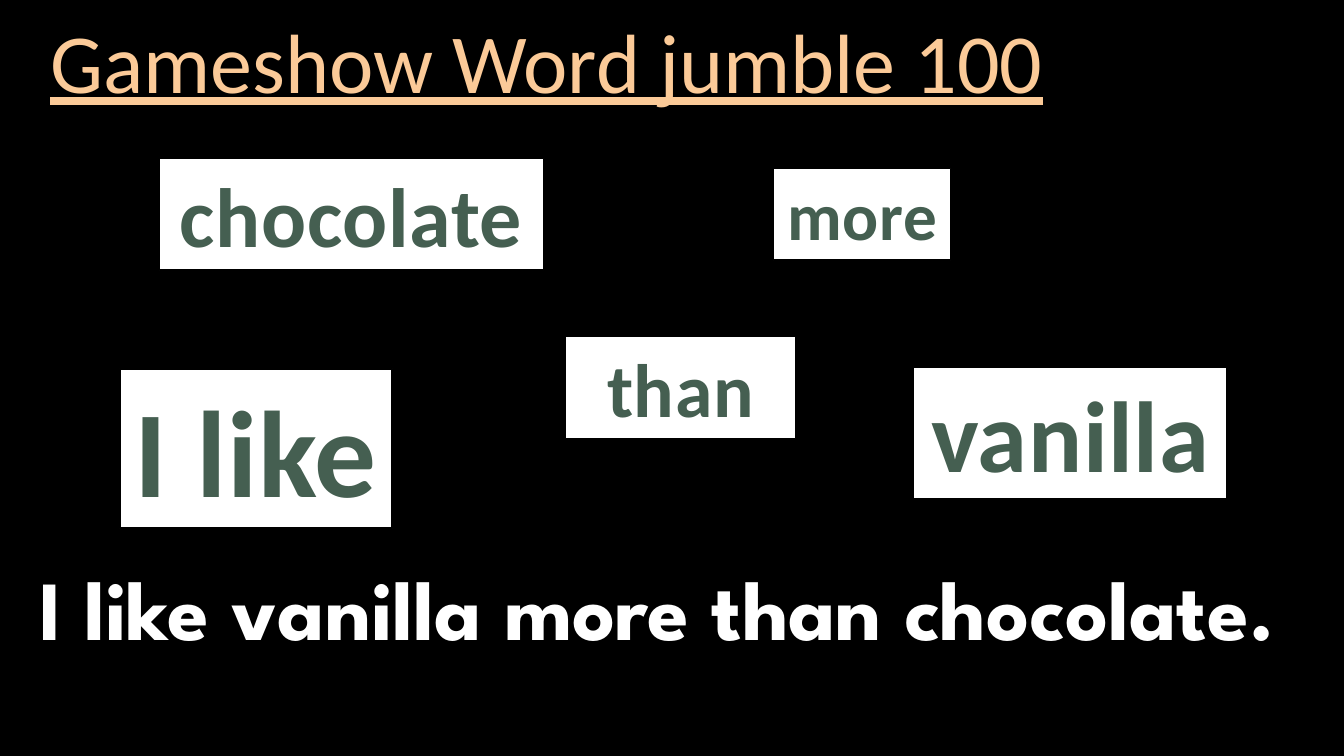
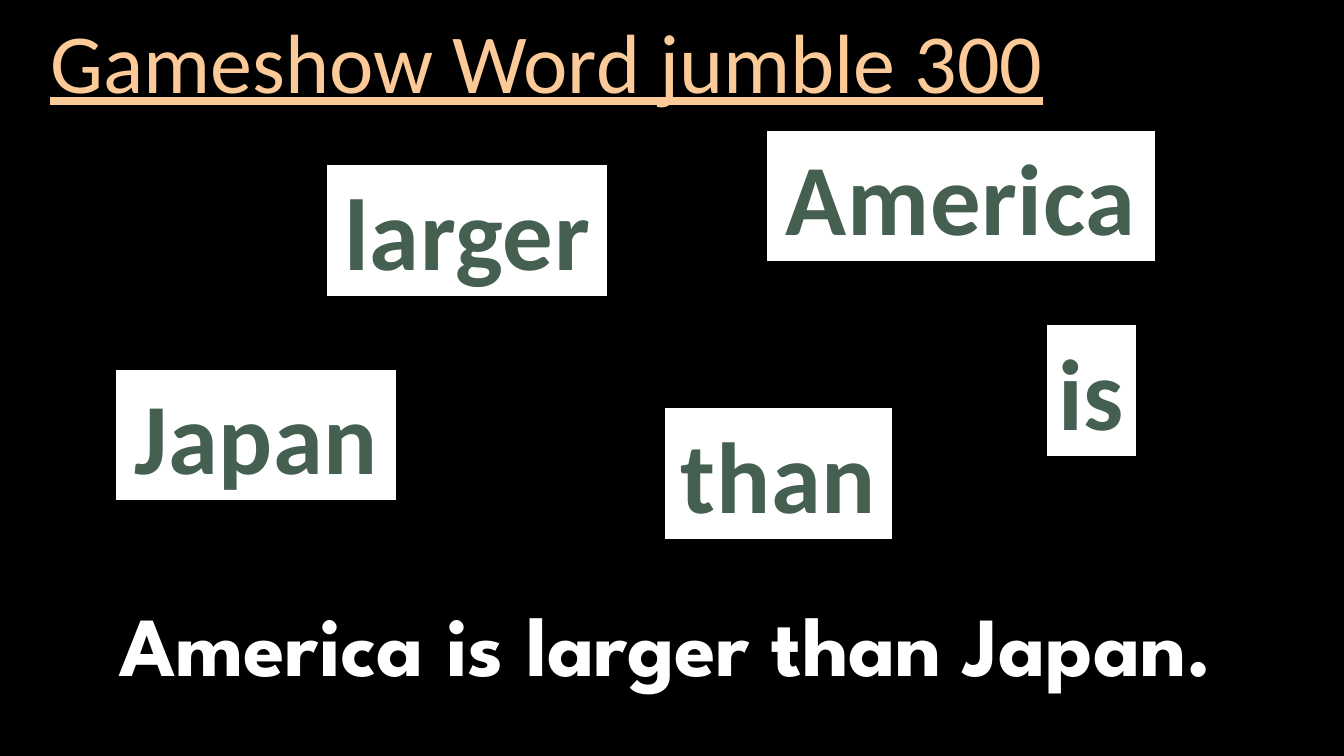
from pptx import Presentation
from pptx.dml.color import RGBColor
from pptx.enum.shapes import MSO_SHAPE
from pptx.enum.text import MSO_ANCHOR, MSO_AUTO_SIZE, PP_ALIGN
from pptx.util import Inches, Pt

BLACK = RGBColor(0x00, 0x00, 0x00)
WHITE = RGBColor(0xFF, 0xFF, 0xFF)
PEACH = RGBColor(0xFB, 0xCA, 0x98)
GREEN = RGBColor(0x45, 0x5F, 0x51)
TEXT_FONT = "Calibri"
ANSWER_FONT = "League Spartan"
TITLE_BOX = (0.4, 0.16, 11.39, 0.99)

PUZZLES = [
    {
        "title": "Gameshow Word jumble 100",
        "cards": [
            ("chocolate", 60, (1.58, 1.57, 3.81, 1.11)),
            ("more", 48, (7.67, 1.67, 1.76, 0.91)),
            ("than", 54, (5.61, 3.34, 2.28, 1.01)),
            ("vanilla", 72, (9.06, 3.64, 3.11, 1.31)),
            ("I like", 88, (1.19, 3.66, 2.7, 1.58)),
        ],
        "answer": ("I like vanilla more than chocolate.", (0.17, 5.47, 12.7, 2.03)),
    },
    {
        "title": "Gameshow Word jumble 300",
        "cards": [
            ("larger", 72, (3.24, 1.63, 2.79, 1.31)),
            ("than", 72, (6.59, 4.04, 2.26, 1.31)),
            ("is", 72, (10.38, 3.22, 0.89, 1.31)),
            ("Japan", 72, (1.14, 3.66, 2.8, 1.31)),
            ("America", 72, (7.6, 1.29, 3.86, 1.31)),
        ],
        "answer": ("America is larger than Japan.", (0.48, 5.83, 12.25, 1.11)),
    },
]


def inches(box):
    """Turn a left, top, width, height box into lengths."""
    return [Inches(value) for value in box]


def write(shape, text, size, color, font=TEXT_FONT, bold=False,
          align=PP_ALIGN.CENTER, anchor=MSO_ANCHOR.TOP, wrap=True):
    """Write one styled line in a shape and return its paragraph and span."""
    frame = shape.text_frame
    frame.auto_size = MSO_AUTO_SIZE.NONE
    frame.word_wrap = wrap
    frame.vertical_anchor = anchor
    para = frame.paragraphs[0]
    para.alignment = align
    span = para.add_run()
    span.text = text
    span.font.name = font
    span.font.size = Pt(size)
    span.font.bold = bold
    span.font.color.rgb = color
    return para, span


def add_title(page, text, box):
    """Place the underlined title in the title placeholder."""
    title = page.shapes.title
    title.left, title.top, title.width, title.height = inches(box)
    para, span = write(title, text, 60, PEACH, align=PP_ALIGN.LEFT,
                       anchor=MSO_ANCHOR.MIDDLE)
    para.line_spacing = 0.9
    span.font.underline = True


def add_card(page, word, size, box):
    """Place one white word card."""
    card = page.shapes.add_shape(MSO_SHAPE.RECTANGLE, *inches(box))
    card.shadow.inherit = False
    card.fill.solid()
    card.fill.fore_color.rgb = WHITE
    card.line.color.rgb = BLACK
    card.line.width = Pt(1)
    span = write(card, word, size, GREEN, bold=True, wrap=False)[1]
    span.font._element.set("spc", "50")


def add_answer(page, sentence, box):
    """Place the solved sentence below the cards."""
    answer = page.shapes.add_textbox(*inches(box))
    write(answer, sentence, 60, WHITE, font=ANSWER_FONT, bold=True)


def add_puzzle(deck, puzzle):
    """Build one word jumble slide."""
    page = deck.slides.add_slide(deck.slide_layouts.get_by_name("Title Only"))
    add_title(page, puzzle["title"], TITLE_BOX)
    for word, size, box in puzzle["cards"]:
        add_card(page, word, size, box)
    add_answer(page, *puzzle["answer"])


def main():
    """Build and save the deck."""
    deck = Presentation()
    deck.slide_width = Inches(13.33)
    deck.slide_height = Inches(7.5)
    background = deck.slide_master.background.fill
    background.solid()
    background.fore_color.rgb = BLACK
    for puzzle in PUZZLES:
        add_puzzle(deck, puzzle)
    deck.save("out.pptx")


if __name__ == "__main__":
    main()
